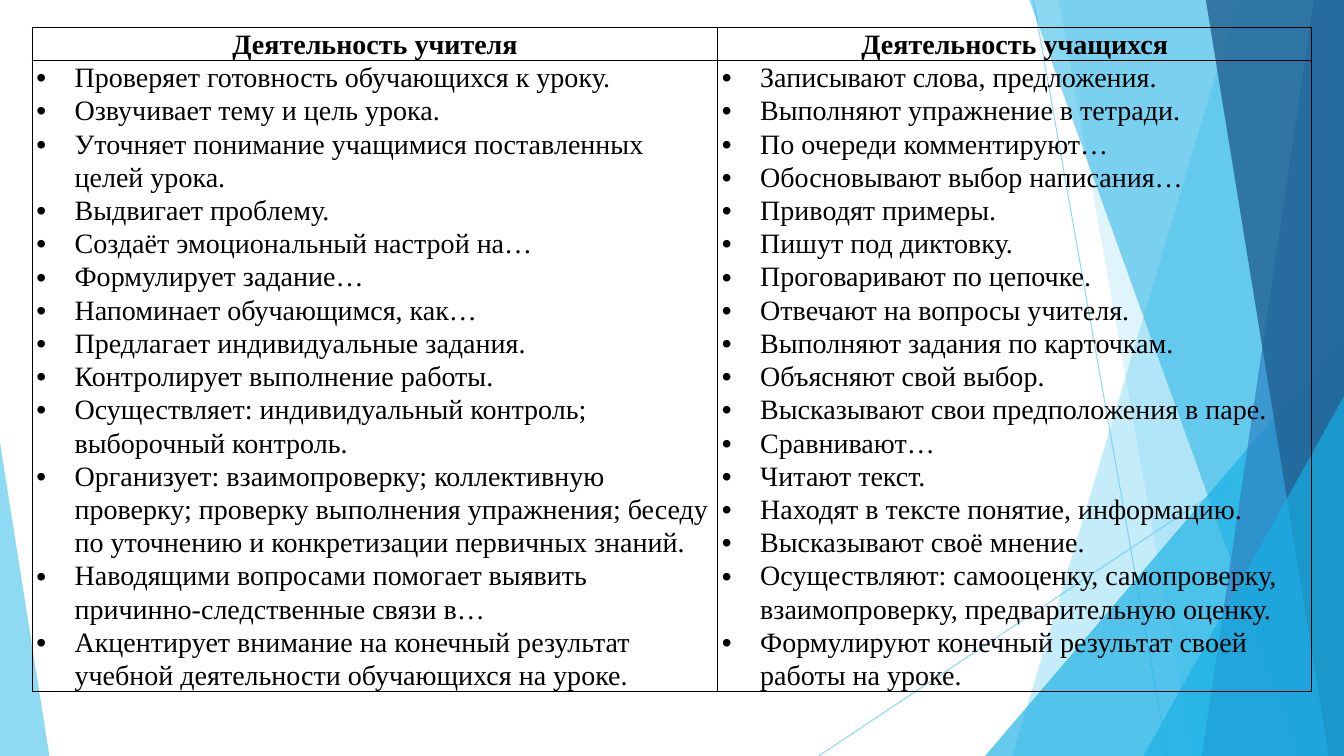
from pptx import Presentation
from pptx.dml.color import RGBColor
from pptx.enum.shapes import MSO_CONNECTOR as Conn, MSO_SHAPE as Shape
from pptx.enum.text import PP_ALIGN as Align
from pptx.oxml.ns import qn
from pptx.util import Inches, Pt
from lxml.etree import SubElement, Element

WIDE, HIGH = 13.33, 7.5
SKY = RGBColor(0x5F, 0xCB, 0xEF)
CYAN = RGBColor(0x17, 0xB0, 0xE4)
BLUE = RGBColor(0x2E, 0x83, 0xC3)
NAVY = RGBColor(0x22, 0x62, 0x92)
BLACK = RGBColor(0, 0, 0)
FONT = "Times New Roman"

HEADS = ["Деятельность учителя", "Деятельность учащихся"]
TEACHER = [
    "Проверяет готовность обучающихся к уроку.",
    "Озвучивает тему и цель урока.",
    "Уточняет понимание учащимися поставленных целей урока.",
    "Выдвигает проблему.",
    "Создаёт эмоциональный настрой на…",
    "Формулирует задание…",
    "Напоминает обучающимся, как…",
    "Предлагает индивидуальные задания.",
    "Контролирует выполнение работы.",
    "Осуществляет: индивидуальный контроль; выборочный контроль.",
    "Организует: взаимопроверку; коллективную проверку; проверку выполнения "
    "упражнения; беседу по уточнению и конкретизации первичных знаний.",
    "Наводящими вопросами помогает выявить причинно-следственные связи в…",
    "Акцентирует внимание на конечный результат учебной деятельности "
    "обучающихся на уроке.",
]
PUPILS = [
    "Записывают слова, предложения.",
    "Выполняют упражнение в тетради.",
    "По очереди комментируют…",
    "Обосновывают выбор написания…",
    "Приводят примеры.",
    "Пишут под диктовку.",
    "Проговаривают по цепочке.",
    "Отвечают на вопросы учителя.",
    "Выполняют задания по карточкам.",
    "Объясняют свой выбор.",
    "Высказывают свои предположения в паре.",
    "Сравнивают…",
    "Читают текст.",
    "Находят в тексте понятие, информацию.",
    "Высказывают своё мнение.",
    "Осуществляют: самооценку, самопроверку, взаимопроверку, "
    "предварительную оценку.",
    "Формулируют конечный результат своей работы на уроке.",
]


def fade(fill, color, share):
    """Solid colour with the given opacity in percent."""
    fill.solid()
    fill.fore_color.rgb = color
    tint = fill._xPr.find(qn("a:solidFill"))[0]
    SubElement(tint, qn("a:alpha"), val=str(share * 1000))


def paint(shape, color, share):
    shape.shadow.inherit = False
    shape.line.fill.background()
    fade(shape.fill, color, share)


def ray(shapes, start, end):
    line = shapes.add_connector(Conn.STRAIGHT, *map(Inches, start + end))
    line.line.width = Pt(0.75)
    fade(line.line.fill, SKY, 70)
    SubElement(line._element.spPr, qn("a:effectLst"))


def band(shapes, top, foot, color, share):
    """Strip from a slanted left edge to the right side of the slide."""
    pen = shapes.build_freeform(Inches(top), 0)
    ends = [(WIDE, 0), (WIDE, HIGH), (foot, HIGH)]
    pen.add_line_segments([(Inches(x), Inches(y)) for x, y in ends])
    paint(pen.convert_to_shape(), color, share)


def wedge(shapes, left, top, width, peak, color, share):
    """Right triangle that stands on the bottom of the slide."""
    box = map(Inches, (left, top, width, HIGH - top))
    shape = shapes.add_shape(Shape.ISOSCELES_TRIANGLE, *box)
    shape.adjustments[0] = peak
    paint(shape, color, share)


def backdrop(shapes):
    ray(shapes, (10.25, 0), (11.58, HIGH))
    ray(shapes, (WIDE, 4.03), (8.12, HIGH))
    band(shapes, 12.28, 10.04, SKY, 36)
    band(shapes, 10.5, 11.83, SKY, 20)
    wedge(shapes, 9.77, 3.33, 3.56, 1, CYAN, 66)
    band(shapes, 10.21, 12.91, CYAN, 50)
    band(shapes, 13.03, 11.92, BLUE, 70)
    band(shapes, 11.96, 13.18, NAVY, 80)
    wedge(shapes, 11.34, 3.93, 1.99, 1, CYAN, 66)
    wedge(shapes, 0, 4.39, 0.49, 0, SKY, 70)


def frame(cell):
    """Black one-point border on all four sides."""
    props = cell._tc.get_or_add_tcPr()
    for spot, side in enumerate(("lnL", "lnR", "lnT", "lnB")):
        edge = Element(qn("a:" + side), w=str(Pt(1)))
        ink = SubElement(edge, qn("a:solidFill"))
        SubElement(ink, qn("a:srgbClr"), val=str(BLACK))
        props.insert(spot, edge)


def bullet(para):
    props = para._p.get_or_add_pPr()
    props.set("marL", str(Inches(0.38)))
    props.set("indent", str(Inches(-0.38)))
    SubElement(props, qn("a:buFont"), typeface="Arial")
    SubElement(props, qn("a:buChar"), char="•")


def write(cell, items, head):
    cell.fill.background()
    frame(cell)
    cell.margin_left = cell.margin_right = Inches(0.04)
    cell.margin_top = cell.margin_bottom = 0
    text = cell.text_frame
    text.text = "\n".join(items)
    for para in text.paragraphs:
        para.line_spacing = 1.07
        font = para.font
        font.name, font.size, font.bold = FONT, Pt(20), head
        font.color.rgb = BLACK
        if head:
            para.alignment = Align.CENTER
        else:
            bullet(para)


def duties(shapes, left, top, cols, rows):
    """Two-column table of what the teacher and the pupils do."""
    box = map(Inches, (left, top, sum(cols), sum(rows)))
    table = shapes.add_table(len(rows), len(cols), *box).table
    table.first_row = table.horz_banding = False
    for row, size in zip(table.rows, rows):
        row.height = Inches(size)
    for i, (size, items) in enumerate(zip(cols, (TEACHER, PUPILS))):
        table.columns[i].width = Inches(size)
        write(table.cell(0, i), [HEADS[i]], True)
        write(table.cell(1, i), items, False)


def main():
    deck = Presentation()
    deck.slide_width, deck.slide_height = Inches(WIDE), Inches(HIGH)
    slide = deck.slides.add_slide(deck.slide_layouts[6])
    backdrop(slide.shapes)
    duties(slide.shapes, 0.32, 0.27, (6.8, 5.89), (0.33, 6.26))
    deck.save("out.pptx")


if __name__ == "__main__":
    main()
